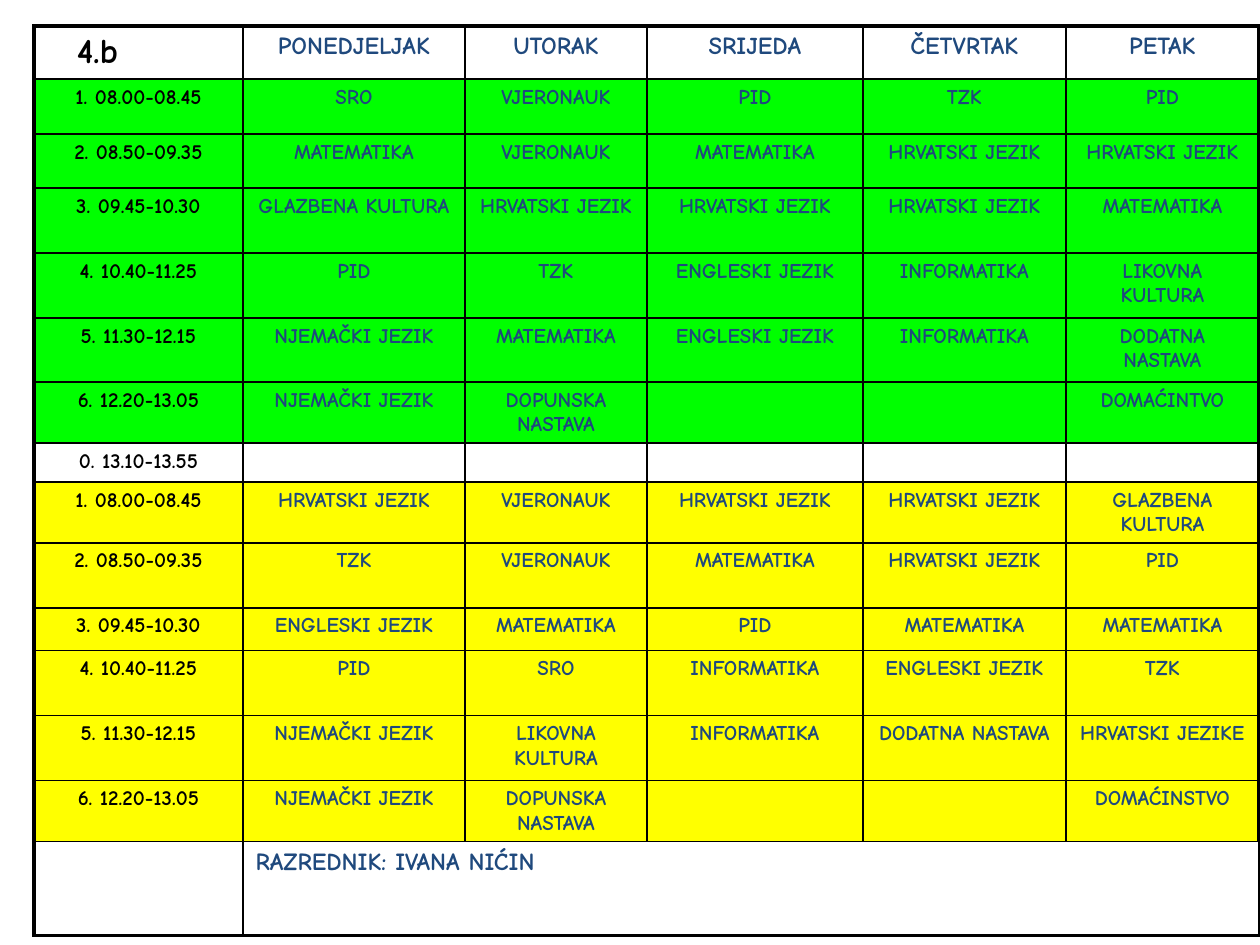
from lxml import etree
from pptx import Presentation
from pptx import util as u
from pptx.dml.color import RGBColor
from pptx.enum import text
from pptx.oxml.ns import qn

PX = 914400 // 126
FONT, NAVY, BLACK = "Comic Neue", "1F497D", "000000"
GREEN, YELLOW = "00FF00", "FFFF00"

LEFT, TOP = 34, 26
COLUMNS = [209, 222, 182, 216, 203, 193]
HEADER_HEIGHT, FOOTER_HEIGHT = 53, 94

CLASS_NAME = "4.b"
TEACHER = "RAZREDNIK: IVANA NIĆIN"
DAYS = ["PONEDJELJAK", "UTORAK", "SRIJEDA", "ČETVRTAK", "PETAK"]
TIMES = ["0. 13.10-13.55", "1. 08.00-08.45", "2. 08.50-09.35", "3. 09.45-10.30",
         "4. 10.40-11.25", "5. 11.30-12.15", "6. 12.20-13.05"]
HJ, EJ, NJ = "HRVATSKI JEZIK", "ENGLESKI JEZIK", "NJEMAČKI JEZIK"
MAT, INF, VJ = "MATEMATIKA", "INFORMATIKA", "VJERONAUK"
GK, LK = "GLAZBENA KULTURA", "LIKOVNA KULTURA"
DOD, DOP = "DODATNA NASTAVA", "DOPUNSKA NASTAVA"

# (period, row height, fill, subjects from Monday to Friday)
LESSONS = [
    (1, 55, GREEN, ["SRO", VJ, "PID", "TZK", "PID"]),
    (2, 54, GREEN, [MAT, VJ, MAT, HJ, HJ]),
    (3, 65, GREEN, [GK, HJ, HJ, HJ, MAT]),
    (4, 65, GREEN, ["PID", "TZK", EJ, INF, LK]),
    (5, 64, GREEN, [NJ, MAT, EJ, INF, DOD]),
    (6, 61, GREEN, [NJ, DOP, "", "", "DOMAĆINTVO"]),
    (0, 39, None, [""] * 5),
    (1, 61, YELLOW, [HJ, VJ, HJ, HJ, GK]),
    (2, 65, YELLOW, ["TZK", VJ, MAT, HJ, "PID"]),
    (3, 43, YELLOW, [EJ, MAT, "PID", MAT, MAT]),
    (4, 65, YELLOW, ["PID", "SRO", INF, EJ, "TZK"]),
    (5, 65, YELLOW, [NJ, LK, INF, DOD, "HRVATSKI JEZIKE"]),
    (6, 61, YELLOW, [NJ, DOP, "", "", "DOMAĆINSTVO"]),
]


def px(length):
    return u.Emu(length * PX)


def color(value):
    return RGBColor.from_string(value)


def write(cell, words, size=12, ink=NAVY, align=text.PP_ALIGN.CENTER):
    para = cell.text_frame.paragraphs[0]
    para.alignment = align
    if not words:
        # Keeps an empty cell from forcing a taller row.
        etree.SubElement(para._p, qn("a:endParaRPr"), sz=str(size * 100))
        return
    span = para.add_run()
    span.text = words
    span.font.name = FONT
    span.font.size = u.Pt(size)
    span.font.bold = True
    span.font.color.rgb = color(ink)


def add_borders(cell, row, col, last_row, last_col):
    """Thin lines between cells, thick lines round the table."""
    outer = {"lnL": col == 0, "lnR": col == last_col,
             "lnT": row == 0, "lnB": row == last_row}
    for side, thick in outer.items():
        line = etree.SubElement(cell._tc.get_or_add_tcPr(), qn(f"a:{side}"),
                                w=str(u.Pt(2.25 if thick else 1)))
        fill = etree.SubElement(line, qn("a:solidFill"))
        etree.SubElement(fill, qn("a:srgbClr"), val=BLACK)


def main():
    deck = Presentation()
    deck.slide_width, deck.slide_height = u.Inches(10), u.Inches(7.5)
    page = deck.slides.add_slide(deck.slide_layouts[6])

    heights = [HEADER_HEIGHT] + [lesson[1] for lesson in LESSONS] + [FOOTER_HEIGHT]
    fills = [None] + [lesson[2] for lesson in LESSONS] + [None]
    table = page.shapes.add_table(len(heights), len(COLUMNS), px(LEFT), px(TOP),
                                  px(sum(COLUMNS)), px(sum(heights))).table
    table.first_row = table.horz_banding = False
    for column, width in zip(table.columns, COLUMNS):
        column.width = px(width)

    last_row, last_col = len(heights) - 1, len(COLUMNS) - 1
    for r, (height, fill) in enumerate(zip(heights, fills)):
        table.rows[r].height = px(height)
        for c in range(len(COLUMNS)):
            cell = table.cell(r, c)
            add_borders(cell, r, c, last_row, last_col)
            if fill:
                cell.fill.solid()
                cell.fill.fore_color.rgb = color(fill)
            else:
                cell.fill.background()

    corner = table.cell(0, 0)
    corner.margin_left = px(43)
    write(corner, CLASS_NAME, size=20, ink=BLACK, align=text.PP_ALIGN.LEFT)
    for c, day in enumerate(DAYS, 1):
        write(table.cell(0, c), day, size=14)
    for r, (period, _, _, subjects) in enumerate(LESSONS, 1):
        write(table.cell(r, 0), TIMES[period], ink=BLACK)
        for c, subject in enumerate(subjects, 1):
            write(table.cell(r, c), subject)
    footer = table.cell(last_row, 1)
    footer.merge(table.cell(last_row, last_col))
    write(footer, TEACHER, size=14, align=text.PP_ALIGN.LEFT)

    deck.save("out.pptx")


if __name__ == "__main__":
    main()
